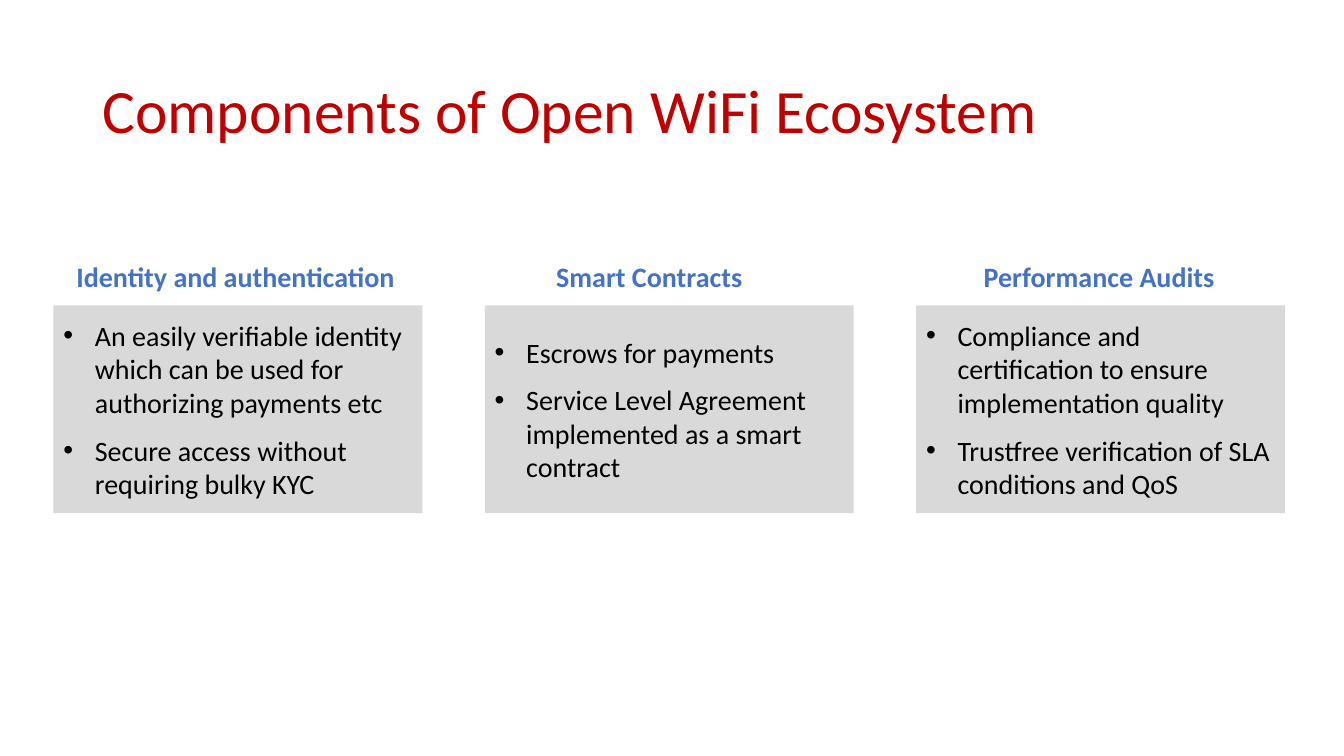
from lxml import etree
from pptx import Presentation
from pptx.dml.color import RGBColor
from pptx.enum.shapes import MSO_SHAPE
from pptx.enum.text import MSO_ANCHOR, MSO_AUTO_SIZE, PP_ALIGN
from pptx.oxml.ns import qn
from pptx.util import Pt

FONT = "Calibri"
CARD_LEFT, CARD_TOP, CARD_STEP = 38.2, 218.2, 308.1
CARD_WIDTH, CARD_HEIGHT = 263.5, 148.3
HEADING_TOP, HEADING_HEIGHT = 181.6, 31.5
BULLET_INDENT = 22.5

# Heading, its left edge and width, then the bullet points below it
COMPONENTS = [
    ("Identity and authentication", 47.5, 244, [
        "An easily verifiable identity which can be used for authorizing payments etc",
        "Secure access without requiring bulky KYC"]),
    ("Smart Contracts", 390.2, 148.3, [
        "Escrows for payments",
        "Service Level Agreement implemented as a smart contract"]),
    ("Performance Audits", 695.5, 180.7, [
        "Compliance and certification to ensure implementation quality",
        "Trustfree verification of SLA conditions and QoS"]),
]


def color(hex_code):
    return RGBColor.from_string(hex_code)


def format_text(paragraph, size, hex_code, bold=False):
    paragraph.alignment = PP_ALIGN.LEFT
    for run in paragraph.runs:
        run.font.name = FONT
        run.font.size = Pt(size)
        run.font.bold = bold
        run.font.color.rgb = color(hex_code)


def add_bullet(paragraph):
    properties = paragraph._p.get_or_add_pPr()
    properties.set("marL", str(Pt(BULLET_INDENT)))
    properties.set("indent", str(-Pt(BULLET_INDENT)))
    etree.SubElement(properties, qn("a:buFont"), typeface="Arial")
    etree.SubElement(properties, qn("a:buChar"), char="•")


def set_title(slide, wording):
    title = slide.shapes.title
    title.left, title.top = Pt(66), Pt(28.8)
    title.width, title.height = Pt(828), Pt(104.4)
    frame = title.text_frame
    frame.text = wording
    frame.vertical_anchor = MSO_ANCHOR.MIDDLE
    frame.paragraphs[0].line_spacing = 0.9
    format_text(frame.paragraphs[0], 44, "C00000")


def add_heading(slide, wording, left, width):
    heading = slide.shapes.add_textbox(
        Pt(left), Pt(HEADING_TOP), Pt(width), Pt(HEADING_HEIGHT))
    frame = heading.text_frame
    frame.text = wording
    frame.word_wrap = False
    frame.auto_size = MSO_AUTO_SIZE.SHAPE_TO_FIT_TEXT
    format_text(frame.paragraphs[0], 20, "4472C4", bold=True)


def add_card(slide, left, points):
    card = slide.shapes.add_shape(
        MSO_SHAPE.RECTANGLE, Pt(left), Pt(CARD_TOP), Pt(CARD_WIDTH), Pt(CARD_HEIGHT))
    card.shadow.inherit = False
    card.fill.solid()
    card.fill.fore_color.rgb = color("D9D9D9")
    card.line.fill.background()
    frame = card.text_frame
    frame.word_wrap = True
    frame.vertical_anchor = MSO_ANCHOR.MIDDLE
    frame.text = "\n".join(points)
    for index, paragraph in enumerate(frame.paragraphs):
        format_text(paragraph, 20, "000000")
        paragraph.space_before = Pt(10 if index else 0)
        add_bullet(paragraph)


def main():
    presentation = Presentation()
    presentation.slide_width, presentation.slide_height = Pt(960), Pt(540)
    slide = presentation.slides.add_slide(presentation.slide_layouts[5])
    set_title(slide, "Components of Open WiFi Ecosystem")
    for column, (heading, heading_left, heading_width, points) in enumerate(COMPONENTS):
        add_card(slide, CARD_LEFT + column * CARD_STEP, points)
        add_heading(slide, heading, heading_left, heading_width)
    presentation.save("out.pptx")


if __name__ == "__main__":
    main()
